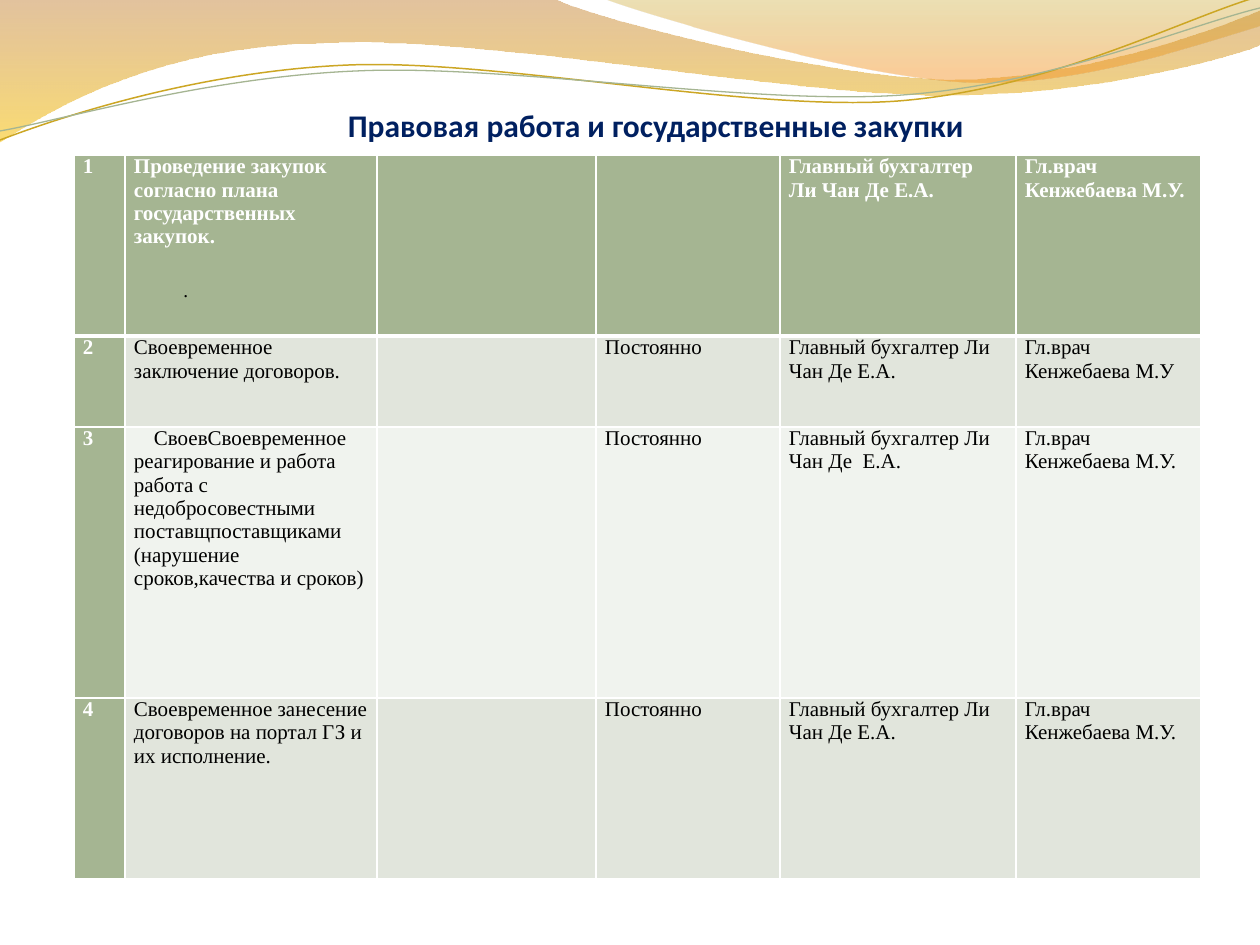
from pptx import Presentation
from pptx.dml.color import RGBColor
from pptx.enum.text import MSO_ANCHOR, PP_ALIGN
from pptx.oxml import parse_xml
from pptx.oxml.ns import nsdecls, qn
from pptx.util import Emu, Pt

TOP, BOTTOM = MSO_ANCHOR.TOP, MSO_ANCHOR.BOTTOM
LEFT, CENTER = PP_ALIGN.LEFT, PP_ALIGN.CENTER
PX = 914400 / 126

COLORS = {
    "white": "FFFFFF", "black": "000000", "navy": "002060",
    "sage": "A5B592", "band_dark": "E1E5DC", "band_light": "F0F3EE",
    "brown": "C07A28", "yellow": "F7BF00", "olive": "C09709",
    "orange": "F59320", "gold": "CCA624",
}

# Each path: start point, then line points (2 numbers) or curves (6 numbers)
LEFT_WAVE = [(0, 0), (554, -1), (600, 21, 837, 79, 955, 79),
             (1075, 79, 1207, 33, 1260, 11), (1261, 45),
             (1238, 55, 1096, 96, 940, 95), (784, 95, 481, 35, 324, 43),
             (163, 45, 58, 105, -1, 142), (0, 0)]
RIGHT_WAVE = [(604, -1), (641, 14, 859, 78, 969, 82),
              (1079, 87, 1211, 40, 1260, 26), (1260, 0), (604, -1)]
GOLD_LINE = [(0, 140), (60, 117, 199, 71, 349, 65),
             (498, 59, 747, 112, 898, 101), (1050, 89, 1182, 19, 1257, -3)]
SAGE_LINE = [(0, 131), (59, 121, 207, 77, 357, 71),
             (508, 64, 752, 106, 903, 95), (1053, 84, 1186, 26, 1260, 8)]

COLUMN_WIDTHS = [51, 252, 219, 184, 236, 185]
ROW_HEIGHTS = [181, 91, 271, 181]
ACCOUNTANT = "Главный бухгалтер Ли Чан Де Е.А."
DOCTOR = "Гл.врач Кенжебаева М.У."
ROWS = [
    ["1", "Проведение закупок согласно плана государственных закупок.",
     "", "", ACCOUNTANT, DOCTOR],
    ["2", "Своевременное заключение договоров.",
     "", "Постоянно", ACCOUNTANT, "Гл.врач Кенжебаева М.У"],
    ["3", "СвоевСвоевременное реагирование и работа работа с "
     "недобросовестными поставщпоставщиками (нарушение "
     "сроков,качества и сроков)",
     "", "Постоянно", "Главный бухгалтер Ли Чан Де  Е.А.", DOCTOR],
    ["4", "Своевременное занесение договоров на портал ГЗ и их исполнение.",
     "", "Постоянно", ACCOUNTANT, DOCTOR],
]
INDENTED_CELL = (2, 1)


def px(value):
    return Emu(round(value * PX))


def rgb(name):
    return RGBColor.from_string(COLORS[name])


def write_text(frame, text, *, size=12, font="Times New Roman",
               color="black", bold=False, align=LEFT, indent=0):
    paragraph = frame.paragraphs[0]
    paragraph.alignment = align
    if indent:
        paragraph._p.get_or_add_pPr().set("indent", str(px(indent)))
    run = paragraph.add_run()
    run.text = text
    run.font.size, run.font.name, run.font.bold = Pt(size), font, bold
    run.font.color.rgb = rgb(color)


def add_path(slide, path, close):
    """Freeform whose six-number segments become cubic curves."""
    points = [(px(x), px(y)) for segment in path
              for x, y in zip(segment[::2], segment[1::2])]
    builder = slide.shapes.build_freeform(*points[0], scale=1.0)
    builder.add_line_segments(points[1:], close=close)
    shape = builder.convert_to_shape()
    shape.shadow.inherit = False

    lines = iter(list(shape._element.iter(qn("a:lnTo"))))
    for segment in path[1:]:
        line = next(lines)
        if len(segment) == 6:
            curve = parse_xml(f'<a:cubicBezTo {nsdecls("a")}/>')
            line.addprevious(curve)
            for part in (line, next(lines), next(lines)):
                curve.append(part[0])
                part.getparent().remove(part)
    return shape


def add_wave(slide, path, stops):
    """Filled wave; each stop is (position, colour, opacity percent)."""
    wave = add_path(slide, path, close=True)
    wave.line.fill.background()
    wave.fill.gradient()
    wave.fill.gradient_angle = 270
    for stop, (position, color, opacity) in zip(wave.fill.gradient_stops, stops):
        stop.position = position
        stop.color.rgb = rgb(color)
        stop._gs[0].append(parse_xml(
            f'<a:alpha {nsdecls("a")} val="{opacity * 1000}"/>'))


def add_curve(slide, path, color, width):
    curve = add_path(slide, path, close=False)
    curve.fill.background()
    curve.line.color.rgb = rgb(color)
    curve.line.width = Pt(width)


def set_borders(cell, **widths):
    properties = cell._tc.get_or_add_tcPr()
    for index, side in enumerate("LRTB"):
        properties.insert(index, parse_xml(
            f'<a:ln{side} {nsdecls("a")} w="{Pt(widths.get(side, 1))}">'
            f'<a:solidFill><a:srgbClr val="{COLORS["white"]}"/></a:solidFill>'
            f'</a:ln{side}>'))


def add_title(slide, text):
    title = slide.shapes.title
    title.left, title.top, title.width, title.height = map(px, (89, 69, 1134, 75))
    frame = title.text_frame
    frame.vertical_anchor = BOTTOM
    frame.margin_left = frame.margin_right = frame.margin_bottom = 0
    write_text(frame, text, size=18, font="Calibri", color="navy",
               bold=True, align=CENTER)


def add_plan_table(slide):
    table = slide.shapes.add_table(
        len(ROWS), len(COLUMN_WIDTHS), px(74), px(155),
        px(sum(COLUMN_WIDTHS)), px(sum(ROW_HEIGHTS))).table
    for column, width in zip(table.columns, COLUMN_WIDTHS):
        column.width = px(width)
    for r, (texts, height) in enumerate(zip(ROWS, ROW_HEIGHTS)):
        table.rows[r].height = px(height)
        for c, text in enumerate(texts):
            cell = table.cell(r, c)
            heading = r == 0 or c == 0
            band = "band_dark" if r % 2 else "band_light"
            cell.fill.solid()
            cell.fill.fore_color.rgb = rgb("sage" if heading else band)
            cell.margin_left = px(9)
            cell.margin_right = px(12 if r == 0 else 9)
            cell.margin_top = cell.margin_bottom = 0
            # A thick rule separates the first row from the rest
            set_borders(cell, T=3 if r == 1 else 1, B=3 if r == 0 else 1)
            if text:
                write_text(cell.text_frame, text, bold=heading,
                           color="white" if heading else "black",
                           indent=20 if (r, c) == INDENTED_CELL else 0)


def add_stray_dot(slide):
    frame = slide.shapes.add_textbox(px(171), px(272), px(35), px(74)).text_frame
    frame.word_wrap = False
    frame.vertical_anchor = TOP
    write_text(frame, ".", size=11)


def main():
    deck = Presentation()
    deck.slide_width, deck.slide_height = px(1260), px(945)
    slide = deck.slides.add_slide(deck.slide_layouts[5])

    # Decorative waves along the top
    add_wave(slide, LEFT_WAVE, [(0, "brown", 45), (1, "yellow", 55)])
    add_wave(slide, RIGHT_WAVE, [(0, "olive", 30), (0.8, "orange", 45)])
    add_curve(slide, GOLD_LINE, "gold", 0.85)
    add_curve(slide, SAGE_LINE, "sage", 0.75)

    # Content
    add_title(slide, "Правовая работа и государственные закупки")
    add_plan_table(slide)
    add_stray_dot(slide)
    deck.save("out.pptx")


if __name__ == "__main__":
    main()
